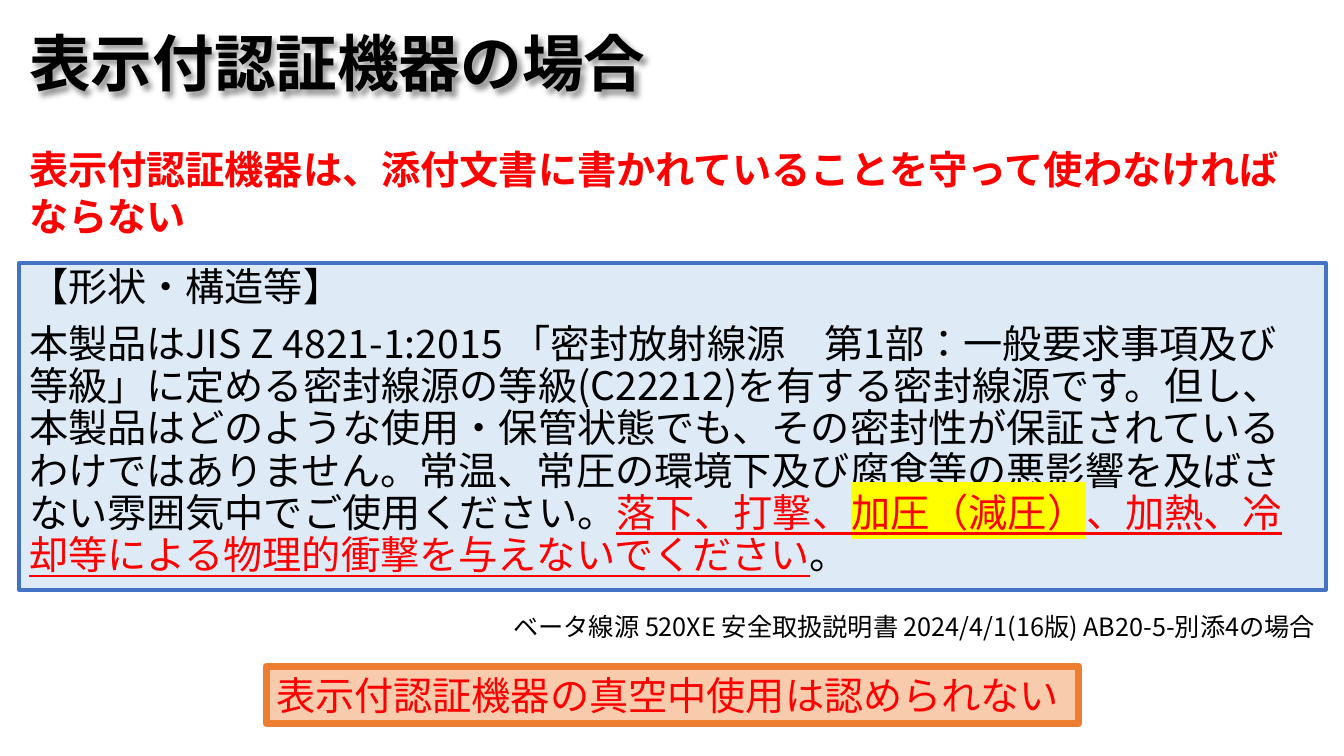
import dataclasses

import pptx
import pptx.dml.color
import pptx.enum.lang
import pptx.enum.shapes
import pptx.enum.text
import pptx.oxml
import pptx.oxml.ns
import pptx.util

Inches = pptx.util.Inches
ALIGN = pptx.enum.text.PP_ALIGN
ANCHOR = pptx.enum.text.MSO_ANCHOR


@dataclasses.dataclass(frozen=True)
class Theme:
    font: str = "Noto Sans CJK JP"
    black: str = "000000"
    red: str = "FF0000"
    yellow: str = "FFFF00"
    quote_fill: str = "DEEBF7"
    quote_line: str = "4472C4"
    notice_fill: str = "F8CBAD"
    notice_line: str = "ED7D31"
    title_size: int = 44
    body_size: int = 28
    source_size: int = 18


THEME = Theme()


def rgb(color):
    return pptx.dml.color.RGBColor.from_string(color)


def add_text(paragraph, text, size=THEME.body_size, color=THEME.black,
             bold=False, underline=False, highlight=None):
    run = paragraph.add_run()
    run.text = text
    font = run.font
    font.size = pptx.util.Pt(size)
    font.bold = bold
    font.underline = underline
    font.color.rgb = rgb(color)
    font.language_id = pptx.enum.lang.MSO_LANGUAGE_ID.JAPANESE
    font.name = THEME.font
    properties = font._element
    latin = properties.find(pptx.oxml.ns.qn("a:latin"))
    namespace = pptx.oxml.ns.nsdecls("a")
    if highlight:
        latin.addprevious(pptx.oxml.parse_xml(
            f'<a:highlight {namespace}><a:srgbClr val="{highlight}"/></a:highlight>'))
    latin.addnext(pptx.oxml.parse_xml(f'<a:ea {namespace} typeface="{THEME.font}"/>'))


def format_paragraph(paragraph, align=ALIGN.LEFT, line_spacing=1.0, before=0):
    paragraph.alignment = align
    paragraph.line_spacing = line_spacing
    paragraph.space_before = pptx.util.Pt(before)
    return paragraph


def prepare_frame(shape, anchor=ANCHOR.TOP, wrap=True):
    frame = shape.text_frame
    frame.auto_size = pptx.enum.text.MSO_AUTO_SIZE.NONE
    frame.word_wrap = wrap
    frame.vertical_anchor = anchor
    return frame


def add_box(slide, left, top, width, height, fill, line, line_width):
    shape = slide.shapes.add_shape(
        pptx.enum.shapes.MSO_SHAPE.RECTANGLE,
        Inches(left), Inches(top), Inches(width), Inches(height))
    shape.shadow.inherit = False
    shape.fill.solid()
    shape.fill.fore_color.rgb = rgb(fill)
    shape.line.color.rgb = rgb(line)
    shape.line.width = pptx.util.Pt(line_width)
    return shape


def add_label(slide, left, top, width, height):
    return slide.shapes.add_textbox(
        Inches(left), Inches(top), Inches(width), Inches(height))


def add_title(slide, text):
    title = slide.shapes.title
    title.left, title.top = Inches(0.19), Inches(0.15)
    title.width, title.height = Inches(11.72), Inches(1.03)
    frame = prepare_frame(title, anchor=ANCHOR.MIDDLE)
    paragraph = format_paragraph(frame.paragraphs[0], line_spacing=0.9)
    add_text(paragraph, text, size=THEME.title_size, bold=True)
    title._element.spPr.append(pptx.oxml.parse_xml(
        f'<a:effectLst {pptx.oxml.ns.nsdecls("a")}>'
        '<a:outerShdw blurRad="50800" dist="38100" dir="2700000" algn="tl" rotWithShape="0">'
        f'<a:srgbClr val="{THEME.black}"><a:alpha val="40000"/></a:srgbClr>'
        '</a:outerShdw></a:effectLst>'))


def add_quote(slide):
    box = add_box(slide, 0.19, 2.61, 12.96, 3.24,
                  THEME.quote_fill, THEME.quote_line, 2.75)
    frame = prepare_frame(box)
    heading = format_paragraph(frame.paragraphs[0], line_spacing=0.9, before=10)
    add_text(heading, "【形状・構造等】")
    passage = format_paragraph(frame.add_paragraph(), line_spacing=0.9, before=10)
    add_text(passage,
             "本製品はJIS Z 4821-1:2015 「密封放射線源　第1部：一般要求事項及び等級」に定める"
             "密封線源の等級(C22212)を有する密封線源です。但し、本製品はどのような使用・保管状態でも、"
             "その密封性が保証されているわけではありません。常温、常圧の環境下及び"
             "腐食等の悪影響を及ばさない雰囲気中でご使用ください。")
    warning = {"color": THEME.red, "underline": True}
    add_text(passage, "落下、打撃、", **warning)
    add_text(passage, "加圧（減圧）", highlight=THEME.yellow, **warning)
    add_text(passage, "、加熱、冷却等による物理的衝撃を与えないでください", **warning)
    add_text(passage, "。")


def main():
    presentation = pptx.Presentation()
    presentation.slide_width = Inches(13.33)
    presentation.slide_height = Inches(7.5)
    slide = presentation.slides.add_slide(presentation.slide_layouts[5])

    add_title(slide, "表示付認証機器の場合")
    add_quote(slide)

    rule = prepare_frame(add_label(slide, 0.19, 1.39, 12.96, 1.04))
    add_text(format_paragraph(rule.paragraphs[0]),
             "表示付認証機器は、添付文書に書かれていることを守って使わなければならない",
             color=THEME.red, bold=True)

    source = prepare_frame(add_label(slide, 4.44, 6.02, 8.7, 0.4), wrap=False)
    add_text(format_paragraph(source.paragraphs[0], align=ALIGN.RIGHT),
             "ベータ線源 520XE 安全取扱説明書 2024/4/1(16版) AB20-5-別添4の場合",
             size=THEME.source_size)

    notice = prepare_frame(add_box(slide, 2.64, 6.61, 8.06, 0.57,
                                   THEME.notice_fill, THEME.notice_line, 5), wrap=False)
    add_text(format_paragraph(notice.paragraphs[0]),
             "表示付認証機器の真空中使用は認められない", color=THEME.red)

    presentation.save("out.pptx")


if __name__ == "__main__":
    main()
